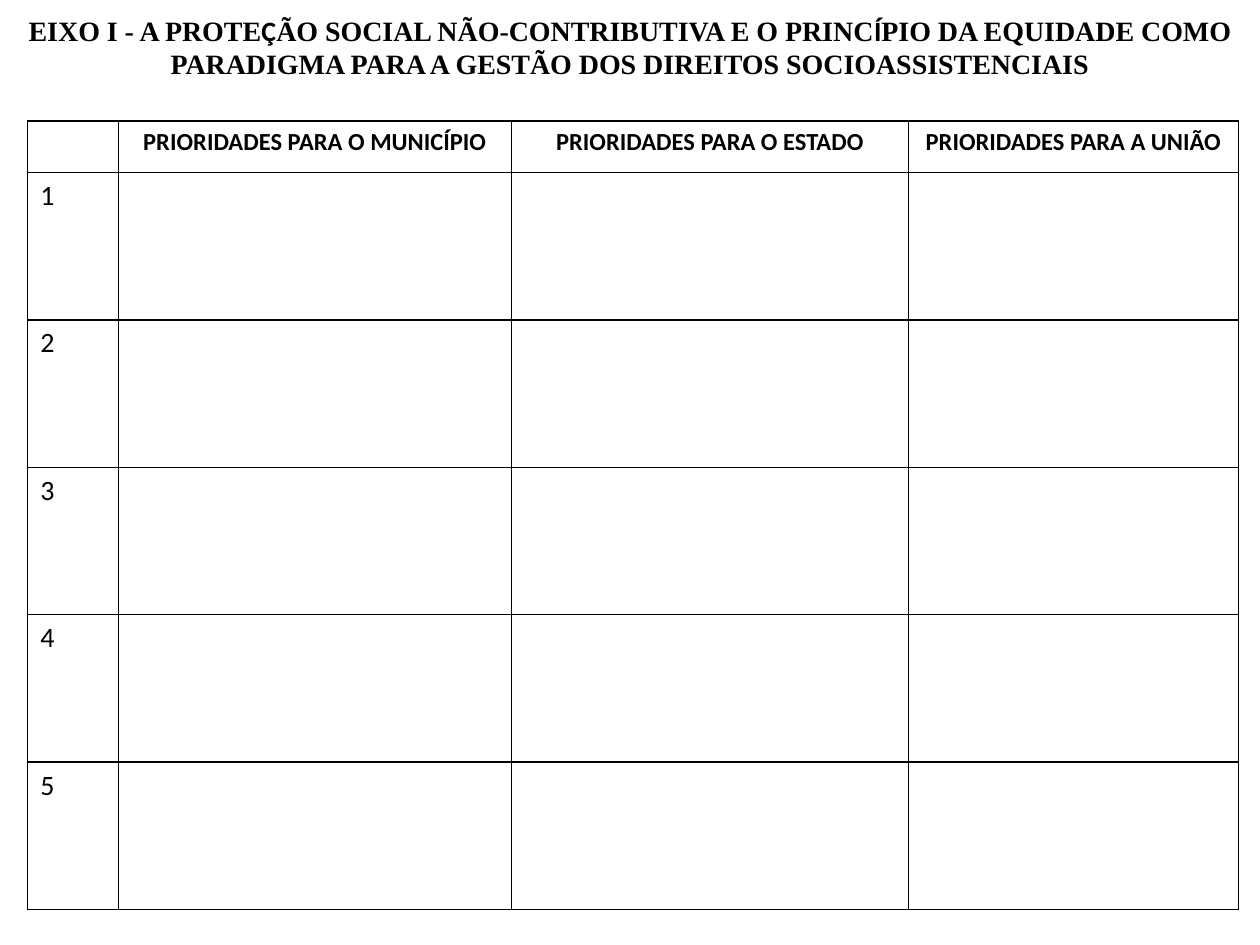
from lxml.etree import SubElement
from pptx import Presentation
from pptx.dml.color import RGBColor
from pptx.enum.text import MSO_ANCHOR, MSO_AUTO_SIZE, PP_ALIGN
from pptx.oxml.ns import qn
from pptx.util import Inches, Pt

COLORS = {"ink": "000000"}
SANS, SERIF = "Calibri", "Times New Roman"

TITLE = [
    ("EIXO I - A PROTE", SERIF),
    ("Ç", SANS),
    ("ÃO SOCIAL NÃO-CONTRIBUTIVA E O PRINC", SERIF),
    ("Í", SANS),
    ("PIO DA EQUIDADE COMO PARADIGMA PARA A GESTÃO DOS DIREITOS SOCIOASSISTENCIAIS", SERIF),
]
LEVELS = ["O MUNICÍPIO", "O ESTADO", "A UNIÃO"]
HEADER = [""] + [f"PRIORIDADES PARA {level}" for level in LEVELS]
PRIORITIES = 5
COL_WIDTHS = [0.72, 3.12, 3.15, 2.62]
HEADER_HEIGHT, ROW_HEIGHT = 0.41, 1.17


class SlideBuilder:
    def __init__(self, slide):
        self.slide = slide

    def style(self, r, size, font, bold):
        r.font.size = Pt(size)
        r.font.name = font
        r.font.bold = bold
        r.font.color.rgb = RGBColor.from_string(COLORS["ink"])

    def title(self, runs, left, top, width, height):
        sp = self.slide.shapes.title
        sp.left, sp.top = Inches(left), Inches(top)
        sp.width, sp.height = Inches(width), Inches(height)
        tf = sp.text_frame
        tf.word_wrap = True
        tf.auto_size = MSO_AUTO_SIZE.NONE
        tf.vertical_anchor = MSO_ANCHOR.MIDDLE
        p = tf.paragraphs[0]
        p.alignment = PP_ALIGN.CENTER
        for text, font in runs:
            r = p.add_run()
            r.text = text
            self.style(r, 16, font, True)

    def borders(self, cell):
        tc_pr = cell._tc.get_or_add_tcPr()
        for side in ("a:lnL", "a:lnR", "a:lnT", "a:lnB"):
            ln = SubElement(tc_pr, qn(side), w=str(Pt(1)))
            fill = SubElement(ln, qn("a:solidFill"))
            SubElement(fill, qn("a:srgbClr"), val=COLORS["ink"])

    def cell(self, cell, text, header):
        self.borders(cell)
        cell.fill.background()
        if not text:
            return
        cell.text_frame.text = text
        p = cell.text_frame.paragraphs[0]
        p.alignment = PP_ALIGN.CENTER if header else PP_ALIGN.LEFT
        self.style(p.runs[0], 14 if header else 16, SANS, header)

    def table(self, rows, left, top, widths, heights):
        frame = self.slide.shapes.add_table(
            len(rows), len(widths), Inches(left), Inches(top),
            Inches(sum(widths)), Inches(sum(heights)))
        table = frame.table
        table.first_row = table.horz_banding = False
        for column, width in zip(table.columns, widths):
            column.width = Inches(width)
        for i, (row, height) in enumerate(zip(rows, heights)):
            table.rows[i].height = Inches(height)
            for j, text in enumerate(row):
                self.cell(table.cell(i, j), text, i == 0)


def main():
    prs = Presentation()
    prs.slide_width, prs.slide_height = Inches(10), Inches(7.5)
    s = SlideBuilder(prs.slides.add_slide(prs.slide_layouts[5]))
    s.title(TITLE, 0, 0.05, 10, 0.64)
    blanks = [""] * len(LEVELS)
    rows = [HEADER] + [[str(n)] + blanks for n in range(1, PRIORITIES + 1)]
    s.table(rows, 0.22, 0.96, COL_WIDTHS, [HEADER_HEIGHT] + [ROW_HEIGHT] * PRIORITIES)
    prs.save("out.pptx")


if __name__ == "__main__":
    main()
